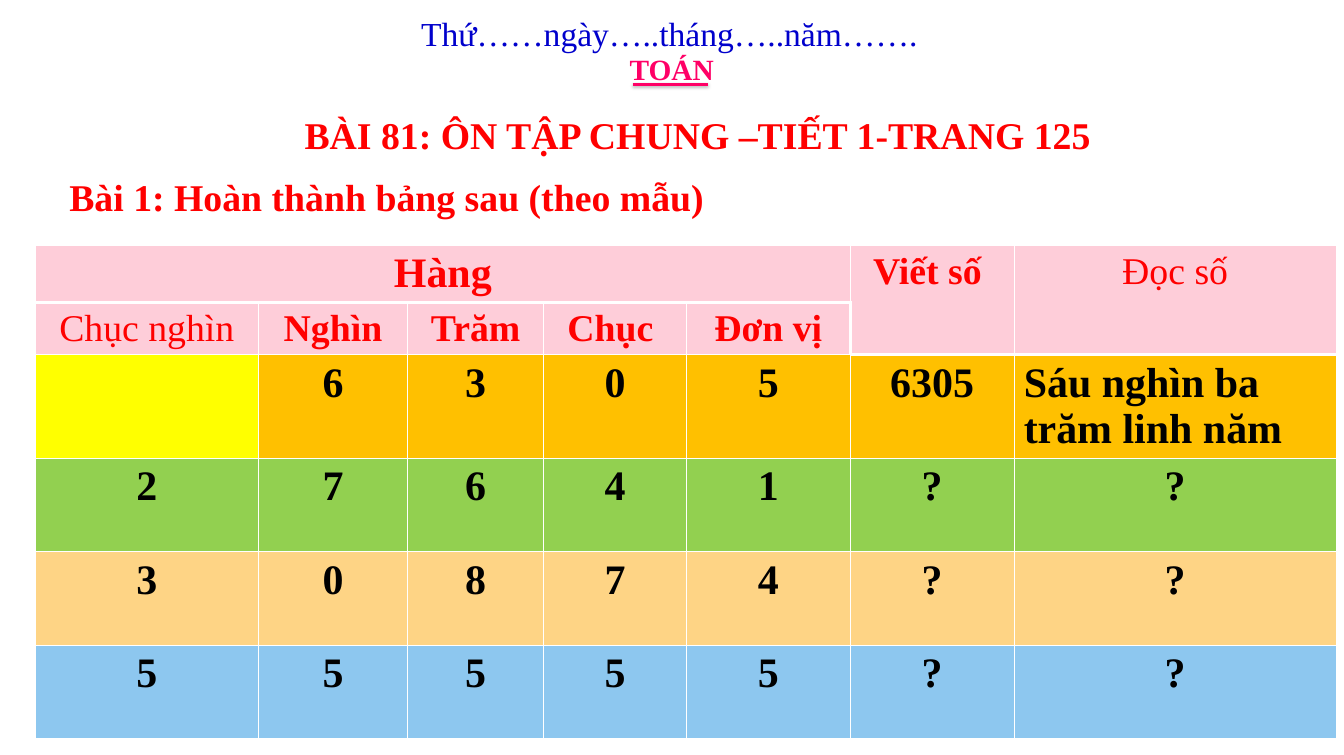
from lxml import etree
from pptx import Presentation
from pptx.dml.color import RGBColor
from pptx.enum.shapes import MSO_CONNECTOR
from pptx.enum.text import MSO_ANCHOR, PP_ALIGN
from pptx.oxml import parse_xml
from pptx.oxml.ns import nsdecls, qn
from pptx.util import Inches, Pt

LEFT, CENTER = PP_ALIGN.LEFT, PP_ALIGN.CENTER
MIDDLE, STRAIGHT = MSO_ANCHOR.MIDDLE, MSO_CONNECTOR.STRAIGHT
FONT = "Times New Roman"
RED, BLACK, WHITE, BLUE, ROSE = "FF0000", "000000", "FFFFFF", "0000CC", "FF0066"
PINK, YELLOW = "FECDD9", "FFFF00"

TITLE = ("BÀI 81: ÔN TẬP CHUNG –TIẾT 1-TRANG 125", (0.99, 1.43, 16.5, 0.71),
         dict(size=36, color=RED, bold=True))
LABELS = [
    ("Bài 1: Hoàn thành bảng sau (theo mẫu)", (0.82, 2.25, 8.69, 0.71),
     dict(size=36, color=RED, bold=True)),
    ("Thứ……ngày…..tháng…..năm…….", (5.48, 0.12, 6.84, 0.64),
     dict(size=32, color=BLUE, bold=False)),
    ("TOÁN", (8.24, 0.63, 1.33, 0.57), dict(size=28, color=ROSE, bold=True)),
]
UNDERLINE = (8.38, 1.12, 9.38, 1.12)

ROWS = [
    ["Hàng", "", "", "", "", "Viết số ", "Đọc số"],
    ["Chục nghìn", "Nghìn", "Trăm", "Chục ", "Đơn vị", "", ""],
    ["", "6", "3", "0", "5", "6305", "Sáu nghìn ba trăm linh năm"],
    ["2", "7", "6", "4", "1", "?", "?"],
    ["3", "0", "8", "7", "4", "?", "?"],
    ["5", "5", "5", "5", "5", "?", "?"],
]
ROW_FILLS = [PINK, PINK, "FFC000", "92D050", "FED485", "8DC7EF"]
COL_WIDTHS = [2.95, 1.98, 1.8, 1.89, 2.17, 2.17, 4.27]
ROW_HEIGHTS = [0.68, 0.62] + [1.24] * 4
MERGES = [((0, 0), (0, 4)), ((0, 5), (1, 5)), ((0, 6), (1, 6))]
PLAIN = ("Chục nghìn", "Đọc số")
MARGINS = dict(margin_left=0.13, margin_right=0.13, margin_top=0.07, margin_bottom=0.07)


def rgb(color):
    """Turn a hex string into a colour."""
    return RGBColor.from_string(color)


def write(tf, text, size, color, bold, align=LEFT):
    """Write one formatted paragraph into a text frame."""
    p = tf.paragraphs[0]
    p.alignment = align
    r = p.add_run()
    r.text = text
    for name, value in dict(name=FONT, size=Pt(size), bold=bold).items():
        setattr(r.font, name, value)
    r.font.color.rgb = rgb(color)


def add_title(s):
    """Place the lesson title in the title placeholder."""
    text, box, style = TITLE
    sp = s.shapes.title
    sp.left, sp.top, sp.width, sp.height = map(Inches, box)
    sp.text_frame.vertical_anchor = MIDDLE
    write(sp.text_frame, text, align=CENTER, **style)


def add_label(s, text, box, style):
    """Add a one-line text box."""
    tf = s.shapes.add_textbox(*map(Inches, box)).text_frame
    tf.word_wrap = False
    write(tf, text, **style)


def add_underline(s):
    """Draw the shadowed line under the subject name."""
    line = s.shapes.add_connector(STRAIGHT, *map(Inches, UNDERLINE))
    line.line.color.rgb = rgb(ROSE)
    line.line.width = Pt(2)
    line._element.spPr.append(parse_xml(
        f'<a:effectLst {nsdecls("a")}><a:outerShdw blurRad="{Pt(3.1)}" dist="{Pt(1.6)}" '
        f'dir="5400000" rotWithShape="0"><a:srgbClr val="{BLACK}"><a:alpha val="38000"/>'
        '</a:srgbClr></a:outerShdw></a:effectLst>'))


def set_borders(cell, thick):
    """Give a cell white borders, heavy on the sides named in thick."""
    tcPr = cell._tc.get_or_add_tcPr()
    for side in "LRTB":
        ln = etree.SubElement(tcPr, qn("a:ln" + side), w=str(Pt(3 if side in thick else 1)))
        fill = etree.SubElement(ln, qn("a:solidFill"))
        etree.SubElement(fill, qn("a:srgbClr"), val=WHITE)


def heavy_sides(i, j):
    """Name the heavy sides of a cell: those that edge the header blocks."""
    if j < 5:
        sides = {0: "B", 1: "T"}.get(i, "")
        return sides + "R" if (i, j) == (1, 4) else sides
    return {0: "B", 1: "B", 2: "T"}.get(i, "")


def add_number_table(s):
    """Build the place-value table."""
    table = s.shapes.add_table(len(ROWS), len(COL_WIDTHS), Inches(0.47), Inches(3.25),
                               Inches(sum(COL_WIDTHS)), Inches(sum(ROW_HEIGHTS))).table
    table.horz_banding = False
    for col, width in zip(table.columns, COL_WIDTHS):
        col.width = Inches(width)
    for row, height in zip(table.rows, ROW_HEIGHTS):
        row.height = Inches(height)
    for first, last in MERGES:
        table.cell(*first).merge(table.cell(*last))
    for i, row in enumerate(ROWS):
        for j, text in enumerate(row):
            cell = table.cell(i, j)
            set_borders(cell, heavy_sides(i, j))
            cell.fill.solid()
            cell.fill.fore_color.rgb = rgb(YELLOW if (i, j) == (2, 0) else ROW_FILLS[i])
            for name, value in MARGINS.items():
                setattr(cell, name, Inches(value))
            if text:
                write(cell.text_frame, text, size=36 if i < 2 and text != "Hàng" else 40,
                      color=RED if i < 2 else BLACK, bold=text not in PLAIN,
                      align=LEFT if (i, j) == (2, 6) else CENTER)


def main():
    """Build and save the slide."""
    prs = Presentation()
    prs.slide_width, prs.slide_height = Inches(17.8), Inches(10)
    s = prs.slides.add_slide(prs.slide_layouts[5])
    add_number_table(s)
    for label in LABELS:
        add_label(s, *label)
    add_underline(s)
    add_title(s)
    prs.save("out.pptx")


if __name__ == "__main__":
    main()
